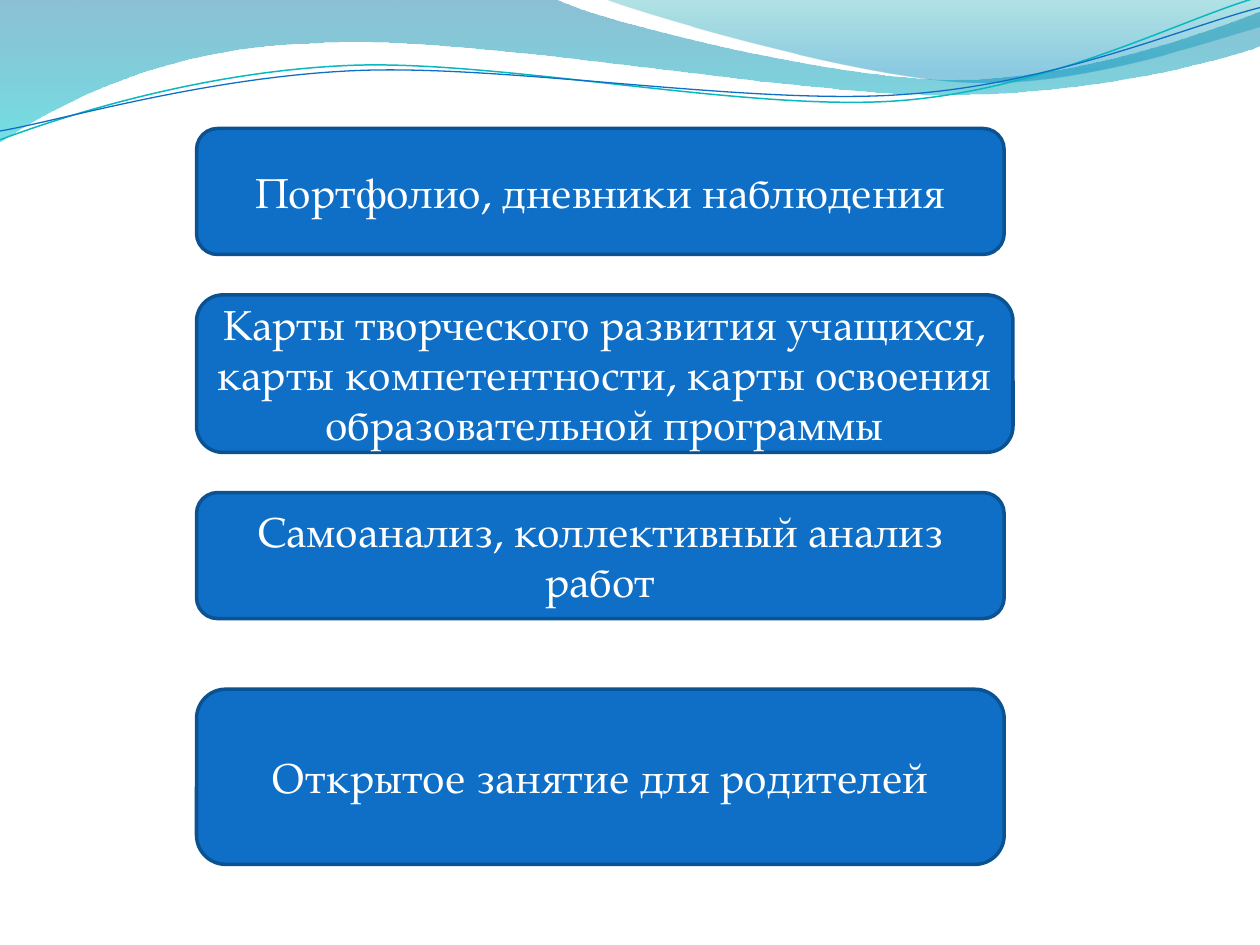
"""Builds a slide of four assessment methods under a wave header."""
from math import cos, radians, sin

from lxml.etree import SubElement
from pptx import Presentation
from pptx.dml.color import RGBColor
from pptx.enum.shapes import MSO_SHAPE
from pptx.enum.text import MSO_ANCHOR, PP_ALIGN
from pptx.oxml.ns import qn
from pptx.util import Inches, Pt

FONT = "TeX Gyre Pagella"
WHITE = RGBColor(0xFF, 0xFF, 0xFF)
BLUE = RGBColor(0x0F, 0x6F, 0xC6)
DARK_BLUE = RGBColor(0x0B, 0x52, 0x92)
TEAL = RGBColor(0x0A, 0xB8, 0xBF)
DEEP_BLUE = RGBColor(0x00, 0x74, 0xA1)
AQUA = RGBColor(0x00, 0xC6, 0xCF)
SEA_GREEN = RGBColor(0x00, 0xA1, 0xA9)
SKY_BLUE = RGBColor(0x00, 0x8B, 0xBF)

METHOD_LEFT = 1.56
METHODS = [
    ("Портфолио, дневники наблюдения", 1.02, 6.41, 1),
    ("Карты творческого развития учащихся, карты компетентности, "
     "карты освоения образовательной программы", 2.34, 6.48, 1.25),
    ("Самоанализ, коллективный анализ работ", 3.91, 6.41, 1),
    ("Открытое занятие для родителей", 5.47, 6.41, 1.39),
]

WAVES = [
    ((-0.01, -0.01, 10.02, 1.14),
     [(0, 0), (4.4, -0.01),
      (4.76, 0.17, 6.64, 0.63, 7.58, 0.63), (8.53, 0.63, 9.58, 0.26, 10, 0.09),
      (10.01, 0.36),
      (9.83, 0.44, 8.7, 0.76, 7.46, 0.75), (6.22, 0.75, 3.82, 0.28, 2.57, 0.34),
      (1.29, 0.36, 0.46, 0.83, -0.01, 1.13), (0, 0)],
     [(0, DEEP_BLUE, 45), (1, AQUA, 55)]),
    ((4.79, -0.01, 5.21, 0.7),
     [(4.79, -0.01),
      (5.09, 0.11, 6.82, 0.62, 7.69, 0.65), (8.56, 0.69, 9.61, 0.32, 10, 0.21),
      (10, 0), (4.79, -0.01)],
     [(0, SEA_GREEN, 30), (0.8, SKY_BLUE, 45)]),
]
STRAND_TILT = -2.7
STRANDS = [
    ((-0.02, 0.22, 10.02, 0.71),
     [(0, 1.11), (0.48, 0.93, 1.58, 0.57, 2.77, 0.52),
      (3.95, 0.47, 5.93, 0.89, 7.13, 0.8), (8.33, 0.71, 9.38, 0.15, 9.98, -0.02)],
     TEAL, 0.85),
    ((-0.02, 0.3, 10.03, 0.58),
     [(0, 1.04), (0.47, 0.96, 1.64, 0.61, 2.83, 0.56),
      (4.03, 0.51, 5.97, 0.84, 7.17, 0.75), (8.36, 0.67, 9.41, 0.21, 10, 0.06)],
     BLUE, 0.75),
]


def place(x, y, box, tilt):
    left, top, width, height = box
    dx, dy = x - left - width / 2, y - top - height / 2
    turn = radians(-tilt)
    return (Inches(width / 2 + dx * cos(turn) - dy * sin(turn)),
            Inches(height / 2 + dx * sin(turn) + dy * cos(turn)))


def add_outline(shapes, box, segments, close, tilt=0):
    routes = [[place(x, y, box, tilt) for x, y in zip(segment[::2], segment[1::2])]
              for segment in segments]
    builder = shapes.build_freeform(*routes[0][0])
    builder.add_line_segments([route[-1] for route in routes[1:]], close=close)
    outline = builder.convert_to_shape()
    outline.left, outline.top, outline.width, outline.height = map(Inches, box)
    outline.rotation = tilt
    outline.shadow.inherit = False
    course = next(outline.element.iter(qn("a:path")))
    course.set("w", str(outline.width))
    course.set("h", str(outline.height))
    for step, route in zip(list(course), routes):
        for point in list(step):
            step.remove(point)
        if len(route) == 3:
            curve = SubElement(course, qn("a:cubicBezTo"))
            course.replace(step, curve)
            step = curve
        for x, y in route:
            point = SubElement(step, qn("a:pt"))
            point.set("x", str(x))
            point.set("y", str(y))
    return outline


def add_wave(shapes, box, segments, stops):
    wave = add_outline(shapes, box, segments, True)
    wave.line.fill.background()
    wave.fill.gradient()
    wave.fill.gradient_angle = 270
    for stop, (position, color, _) in zip(wave.fill.gradient_stops, stops):
        stop.position = position
        stop.color.rgb = color
    colors = wave.element.spPr.iter(qn("a:srgbClr"))
    for color, (_, _, opacity) in zip(colors, stops):
        SubElement(color, qn("a:alpha")).set("val", str(opacity * 1000))


def add_strand(shapes, box, segments, color, width):
    strand = add_outline(shapes, box, segments, False, STRAND_TILT)
    strand.fill.background()
    strand.line.color.rgb = color
    strand.line.width = Pt(width)


def add_method(shapes, wording, top, width, height):
    method = shapes.add_shape(
        MSO_SHAPE.ROUNDED_RECTANGLE,
        Inches(METHOD_LEFT), Inches(top), Inches(width), Inches(height))
    method.shadow.inherit = False
    method.fill.solid()
    method.fill.fore_color.rgb = BLUE
    method.line.color.rgb = DARK_BLUE
    method.line.width = Pt(2)
    frame = method.text_frame
    frame.word_wrap = True
    frame.vertical_anchor = MSO_ANCHOR.MIDDLE
    paragraph = frame.paragraphs[0]
    paragraph.text = wording
    paragraph.alignment = PP_ALIGN.CENTER
    paragraph.font.name = FONT
    paragraph.font.size = Pt(24)
    paragraph.font.color.rgb = WHITE


def main():
    deck = Presentation()
    deck.slide_width, deck.slide_height = Inches(10), Inches(7.5)
    shapes = deck.slides.add_slide(deck.slide_layouts[6]).shapes
    for wave in WAVES:
        add_wave(shapes, *wave)
    strands = shapes.add_group_shape().shapes
    for strand in STRANDS:
        add_strand(strands, *strand)
    for method in METHODS:
        add_method(shapes, *method)
    deck.save("out.pptx")


if __name__ == "__main__":
    main()
